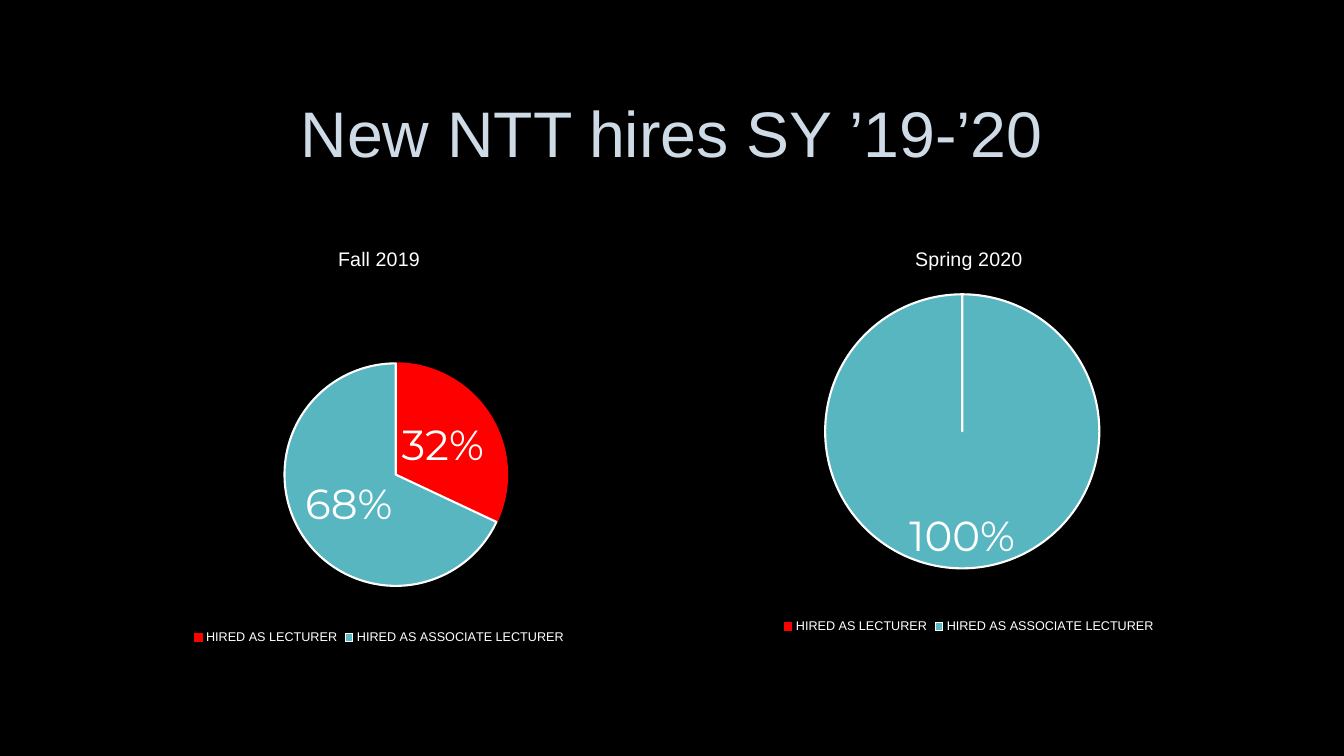
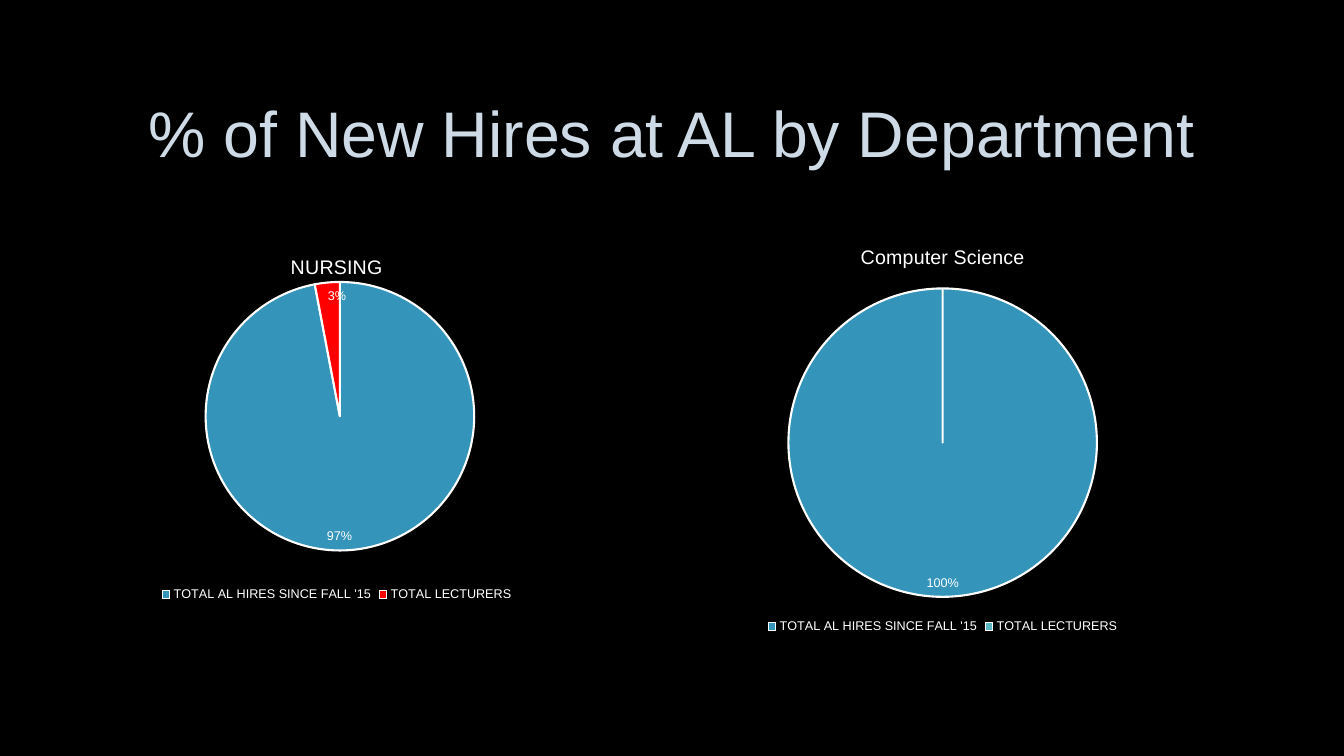
"""Build two slides of pie charts about new lecturer hires."""
from lxml import etree
from pptx import Presentation
from pptx import util as u
from pptx.chart.data import CategoryChartData
from pptx.dml.color import RGBColor
from pptx.enum import chart as ch, text
from pptx.oxml.ns import qn

COLOURS = {"back": "000000", "title": "CEDBE6", "white": "FFFFFF",
           "red": "FF0000", "teal": "58B6C0", "blue": "3494BA"}
FONT = "Arial"
LABEL_FONT = "Montserrat"
RANKS = ["HIRED AS LECTURER", "HIRED AS ASSOCIATE LECTURER"]
TOTALS = ["TOTAL AL HIRES SINCE FALL '15", "TOTAL LECTURERS"]
CENTER = ch.XL_LABEL_POSITION.CENTER
INSIDE_END = ch.XL_LABEL_POSITION.INSIDE_END


def colour(name):
    return RGBColor.from_string(COLOURS[name])


def style_font(font, size, name=FONT, tint="white"):
    font.name = name
    font.size = u.Pt(size)
    font.bold = False
    font.color.rgb = colour(tint)


def add_page(deck, title):
    page = deck.slides.add_slide(deck.slide_layouts[6])
    box = page.shapes.add_textbox(u.Inches(1), u.Inches(0.67), u.Inches(11.32), u.Inches(1.38))
    frame = box.text_frame
    frame.word_wrap = True
    frame.vertical_anchor = text.MSO_ANCHOR.MIDDLE
    para = frame.paragraphs[0]
    para.text = title
    para.alignment = text.PP_ALIGN.CENTER
    para.line_spacing = 0.9
    style_font(para.font, 46, tint="title")
    return page


def place_plot(chart, area):
    plot_area = chart.plots[0]._element.getparent()
    layout = plot_area.find(qn("c:layout"))
    if layout is None:
        layout = etree.Element(qn("c:layout"))
        plot_area.insert(0, layout)
    manual = etree.SubElement(layout, qn("c:manualLayout"))
    settings = [("layoutTarget", "inner"), ("xMode", "edge"), ("yMode", "edge"),
                *zip("xywh", area)]
    for tag, value in settings:
        etree.SubElement(manual, qn(f"c:{tag}")).set("val", str(value))


def add_pie(page, at, title, categories, values, slices, area,
            label_size=9, label_font=FONT, position=INSIDE_END):
    data = CategoryChartData(number_format="0%")
    data.categories = categories
    data.add_series(title, values)
    chart = page.shapes.add_chart(ch.XL_CHART_TYPE.PIE, *map(u.Inches, at), data).chart
    style_font(chart.font, 10)
    chart.has_title = True
    chart.chart_title.include_in_layout = False
    heading = chart.chart_title.text_frame.paragraphs[0]
    heading.text = title
    style_font(heading.font, 14)
    chart.has_legend = True
    chart.legend.position = ch.XL_LEGEND_POSITION.BOTTOM
    chart.legend.include_in_layout = False
    style_font(chart.legend.font, 9)
    plot = chart.plots[0]
    plot.vary_by_categories = True
    for index, (fill, edge) in enumerate(slices):
        form = plot.series[0].points[index].format
        form.fill.solid()
        form.fill.fore_color.rgb = colour(fill)
        form.line.color.rgb = colour(edge)
        form.line.width = u.Pt(1.5)
    plot.has_data_labels = True
    labels = plot.data_labels
    labels.show_value = True
    labels.show_percentage = False
    labels.number_format = "0%;;"
    labels.number_format_is_linked = False
    labels.position = position
    style_font(labels.font, label_size, label_font)
    place_plot(chart, area)


def main():
    deck = Presentation()
    deck.slide_width = u.Inches(13.33)
    deck.slide_height = u.Inches(7.5)
    backdrop = deck.slide_master.background.fill
    backdrop.solid()
    backdrop.fore_color.rgb = colour("back")

    page = add_page(deck, "New NTT hires SY ’19-’20")
    slices = [("red", "red"), ("teal", "white")]
    add_pie(page, (1, 2.27, 5.52, 4.17), "Fall 2019", RANKS, (0.32, 0.68), slices,
            (0.33, 0.32, 0.4, 0.53), 30, LABEL_FONT, CENTER)
    add_pie(page, (6.33, 2.27, 6.56, 4.06), "Spring 2020", RANKS, (0, 1), slices,
            (0.02, 0.16, 0.94, 0.67), 30, LABEL_FONT)

    page = add_page(deck, "% of New Hires at AL by Department")
    add_pie(page, (6.38, 2.25, 5.94, 4.08), "Computer Science", TOTALS, (1, 0),
            [("blue", "white"), ("teal", "white")], (0.24, 0.15, 0.52, 0.75))
    add_pie(page, (0.16, 2.36, 6.36, 3.65), "NURSING", TOTALS, (0.97, 0.03),
            [("blue", "white"), ("red", "white")], (0.03, 0.12, 0.95, 0.73))
    deck.save("out.pptx")


if __name__ == "__main__":
    main()
